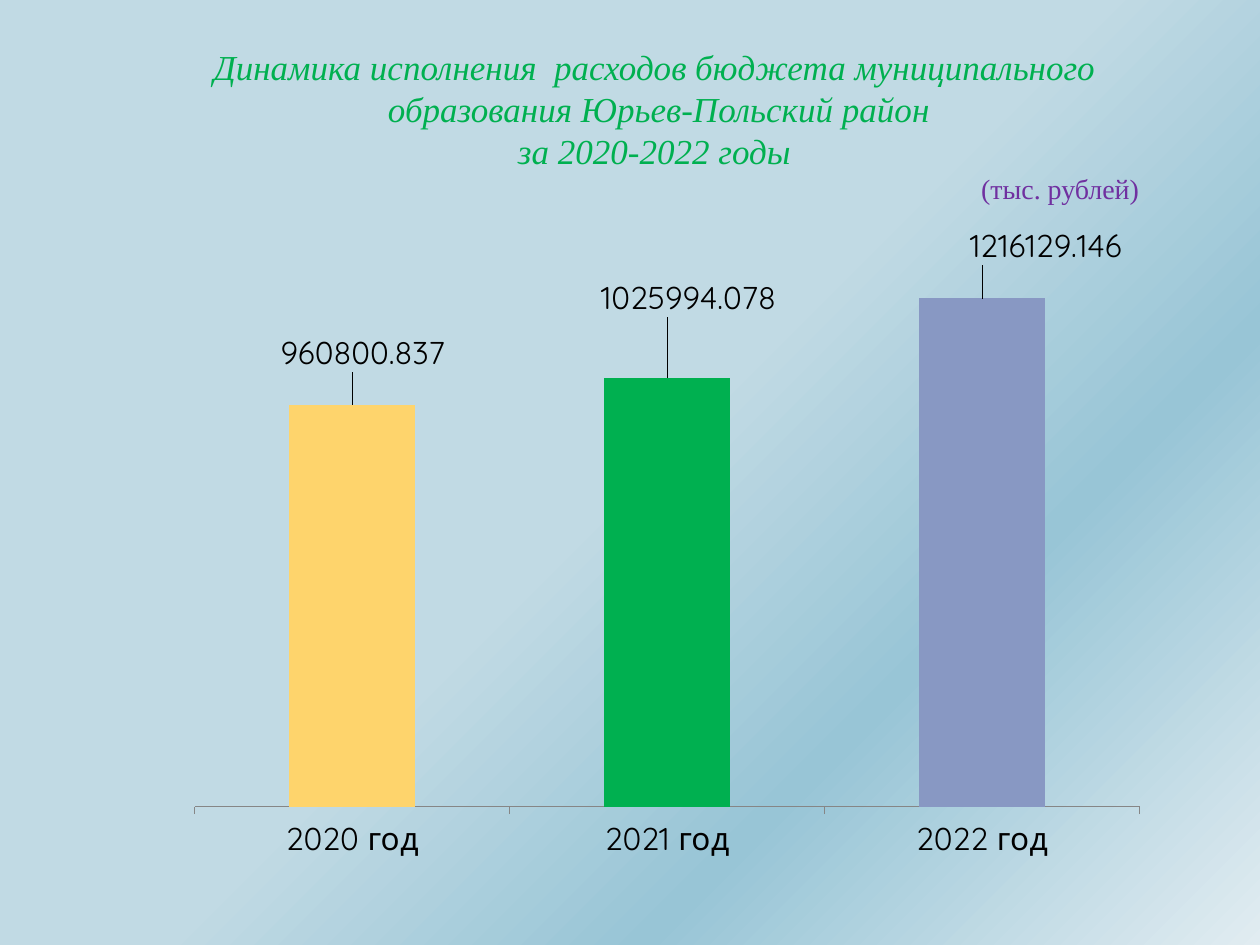
from dataclasses import dataclass

from lxml.etree import _Element as Element
from pptx import Presentation
from pptx.chart.data import CategoryChartData
from pptx.dml.color import RGBColor
from pptx.enum.chart import XL_CHART_TYPE as ChartType
from pptx.enum.chart import XL_LABEL_POSITION as LabelPosition
from pptx.enum.chart import XL_TICK_LABEL_POSITION as TickLabels
from pptx.enum.chart import XL_TICK_MARK as TickMark
from pptx.enum.text import PP_ALIGN as Align
from pptx.oxml import parse_xml
from pptx.oxml.ns import nsdecls
from pptx.slide import Slide
from pptx.util import Pt

BLACK = RGBColor(0x00, 0x00, 0x00)
GREEN = RGBColor(0x00, 0xB0, 0x50)
YELLOW = RGBColor(0xFE, 0xD4, 0x6C)
LAVENDER = RGBColor(0x88, 0x98, 0xC3)
PURPLE = RGBColor(0x70, 0x30, 0xA0)
GREY = RGBColor(0x86, 0x86, 0x86)
SKY = RGBColor(0xC1, 0xDA, 0xE4)
BLUE = RGBColor(0x98, 0xC5, 0xD6)
MIST = RGBColor(0xE1, 0xEC, 0xF1)

CHART_FONT = "Quicksand"
TITLE_FONT = "Times New Roman"


@dataclass(frozen=True)
class YearSpending:
    year: str
    amount: float
    color: RGBColor
    label_dx: float
    label_dy: float


@dataclass(frozen=True)
class TitleLine:
    text: str
    size: int = 20
    color: RGBColor = GREEN
    italic: bool = True
    align: Align = Align.CENTER


SPENDING = [
    YearSpending("2020 год", 960800.837, YELLOW, 0.01, -0.04),
    YearSpending("2021 год", 1025994.078, GREEN, 0.02, -0.08),
    YearSpending("2022 год", 1216129.146, LAVENDER, 0.06, -0.04),
]

TITLE = [
    TitleLine("Динамика исполнения  расходов бюджета муниципального"),
    TitleLine(" образования Юрьев-Польский район"),
    TitleLine(" за 2020-2022 годы "),
    TitleLine("(тыс. рублей)", 16, PURPLE, False, Align.RIGHT),
]


def manual_layout(inner: str) -> Element:
    return parse_xml(
        f'<c:layout {nsdecls("c")}><c:manualLayout>{inner}</c:manualLayout></c:layout>'
    )


def paint_background(slide: Slide) -> None:
    fill = slide.background.fill
    fill.gradient()
    fill.gradient_angle = 315
    stops = "".join(
        f'<a:gs pos="{percent * 1000}"><a:srgbClr val="{color}"/></a:gs>'
        for percent, color in [(50, SKY), (72, BLUE), (100, MIST)]
    )
    gradient = slide.background._cSld.bg.bgPr.find(".//{*}gradFill")
    gradient.replace(
        gradient.find("{*}gsLst"),
        parse_xml(f'<a:gsLst {nsdecls("a")}>{stops}</a:gsLst>'),
    )


def add_spending_chart(slide: Slide, spending: list[YearSpending]) -> None:
    data = CategoryChartData()
    data.categories = [item.year for item in spending]
    data.add_series("Series 1", [item.amount for item in spending])
    chart = slide.shapes.add_chart(
        ChartType.COLUMN_CLUSTERED, Pt(44.6), Pt(106.6), Pt(607), Pt(398.2), data
    ).chart
    chart.has_legend = False
    chart.has_title = False
    chart.font.name = CHART_FONT
    chart.font.size = Pt(18)
    chart.font.color.rgb = BLACK

    amounts = chart.value_axis
    amounts.visible = False
    amounts.has_major_gridlines = False
    amounts.minimum_scale = 0
    amounts.maximum_scale = 1400000
    years = chart.category_axis
    years.major_tick_mark = TickMark.OUTSIDE
    years.tick_label_position = TickLabels.NEXT_TO_AXIS
    years.format.line.color.rgb = GREY
    years.format.line.width = Pt(0.75)

    plot_area = chart._chartSpace.chart.plotArea
    for layout in plot_area.findall("{*}layout"):
        plot_area.remove(layout)
    plot_area.insert(0, manual_layout(
        '<c:layoutTarget val="inner"/><c:xMode val="edge"/><c:yMode val="edge"/>'
        '<c:x val="0.11"/><c:y val="0.05"/><c:w val="0.89"/><c:h val="0.84"/>'
    ))

    plot = chart.plots[0]
    plot.gap_width = 150
    plot.vary_by_categories = False
    bars = plot.series[0]
    bars.format.fill.solid()
    bars.format.fill.fore_color.rgb = LAVENDER
    bars.data_labels.show_value = True
    bars.data_labels.number_format = "General"
    bars.data_labels.number_format_is_linked = False
    for index, item in enumerate(spending):
        bar = bars.points[index]
        bar.format.fill.solid()
        bar.format.fill.fore_color.rgb = item.color
        bar.data_label.position = LabelPosition.OUTSIDE_END
        label = bars.data_labels._element.findall("{*}dLbl")[index]
        label.insert(1, manual_layout(
            f'<c:x val="{item.label_dx}"/><c:y val="{item.label_dy}"/>'
        ))


def add_title(slide: Slide, lines: list[TitleLine]) -> None:
    frame = slide.shapes.add_textbox(Pt(90), Pt(22.3), Pt(568), Pt(99.4)).text_frame
    frame.word_wrap = True
    frame.text = "\n".join(line.text for line in lines)
    for paragraph, line in zip(frame.paragraphs, lines):
        paragraph.alignment = line.align
        font = paragraph.runs[0].font
        font.name = TITLE_FONT
        font.size = Pt(line.size)
        font.italic = line.italic
        font.color.rgb = line.color


def main() -> None:
    presentation = Presentation()
    presentation.slide_width = Pt(720)
    presentation.slide_height = Pt(540)
    slide = presentation.slides.add_slide(presentation.slide_layouts[6])
    paint_background(slide)
    add_spending_chart(slide, SPENDING)
    add_title(slide, TITLE)
    presentation.save("out.pptx")


if __name__ == "__main__":
    main()
